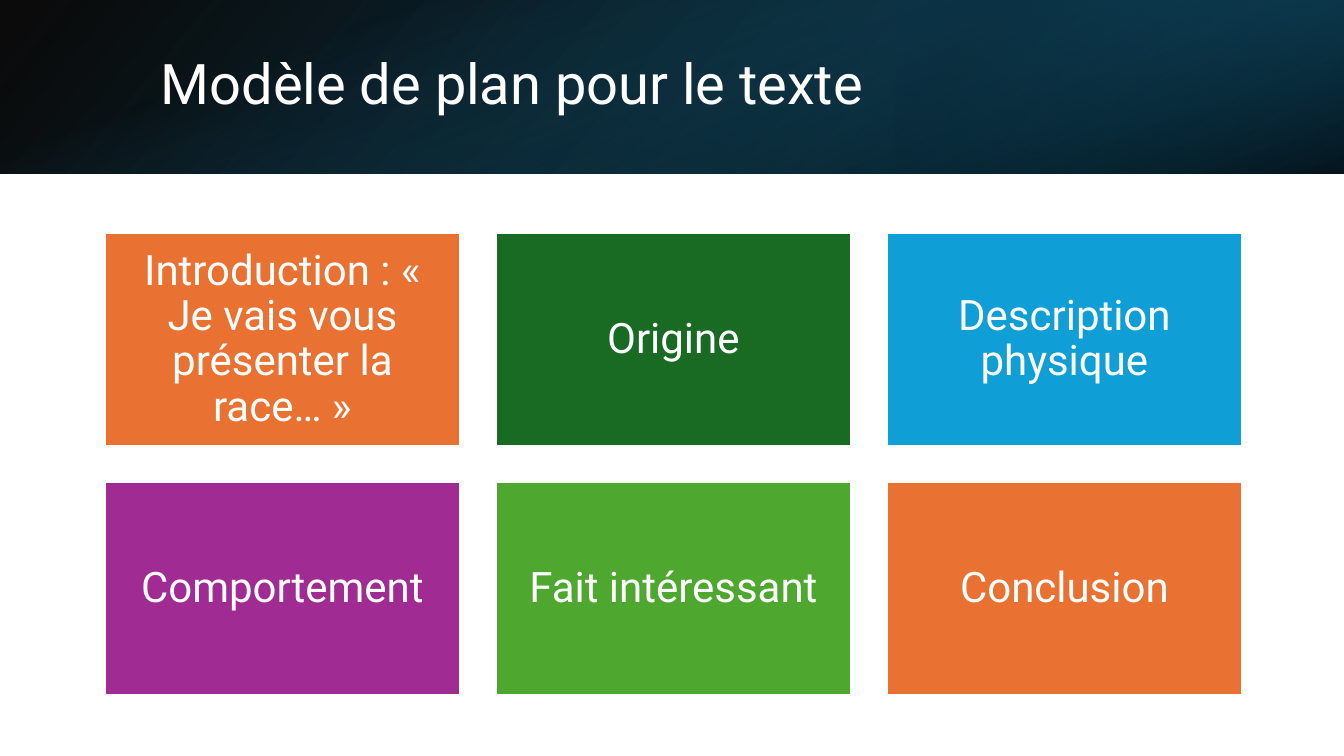
from lxml import etree
from pptx import Presentation
from pptx.dml.color import RGBColor
from pptx.enum.shapes import MSO_SHAPE
from pptx.enum.text import MSO_ANCHOR, PP_ALIGN
from pptx.oxml import parse_xml
from pptx.oxml.ns import nsdecls, qn
from pptx.util import Pt

RECTANGLE = MSO_SHAPE.RECTANGLE
MIDDLE = MSO_ANCHOR.MIDDLE
LEFT, CENTER = PP_ALIGN.LEFT, PP_ALIGN.CENTER

EMU_PER_PX = 914400 / 100.8
PAGE_WIDTH, PAGE_HEIGHT = 1344, 756
BAND_HEIGHT = 174
FONT = "Roboto"
WHITE = "FFFFFF"

# Plan cards, row by row
COLUMNS = 3
CARD_LEFT, CARD_TOP = 105, 233
CARD_WIDTH, CARD_HEIGHT = 355, 213
PITCH_X, PITCH_Y = 391, 249
CARD_INSET = 12
CARDS = [
    ("Introduction : « Je vais vous présenter la race… »", "E97132"),
    ("Origine", "196B24"),
    ("Description physique", "0F9ED5"),
    ("Comportement", "A02B93"),
    ("Fait intéressant", "4EA72E"),
    ("Conclusion", "E97132"),
]


def px(length):
    return round(length * EMU_PER_PX)


def color(hex_value):
    return RGBColor.from_string(hex_value)


def add_rectangle(page, left, top, width, height):
    box = page.shapes.add_shape(RECTANGLE, px(left), px(top), px(width), px(height))
    box.shadow.inherit = False
    return box


def add_gradient_band(page, place, stops, angle, rotation=0, flipped=False):
    """Stops are (position %, colour, opacity %); the angle runs clockwise."""
    band = add_rectangle(page, *place)
    band.line.fill.background()
    band.rotation = rotation
    properties = band.fill._xPr
    if flipped:
        properties.find(qn("a:xfrm")).set("flipH", "1")
    gradient = parse_xml(f'<a:gradFill {nsdecls("a")} rotWithShape="1"><a:gsLst/></a:gradFill>')
    for position, hex_value, opacity in stops:
        stop = etree.SubElement(gradient[0], qn("a:gs"), pos=str(position * 1000))
        shade = etree.SubElement(stop, qn("a:srgbClr"), val=hex_value)
        etree.SubElement(shade, qn("a:alpha"), val=str(opacity * 1000))
    etree.SubElement(gradient, qn("a:lin"), ang=str(angle * 60000), scaled="0")
    properties.find(qn("a:prstGeom")).addnext(gradient)


def write_text(box, text, size, alignment):
    frame = box.text_frame
    frame.word_wrap = True
    frame.vertical_anchor = MIDDLE
    frame.text = text
    para = frame.paragraphs[0]
    para.alignment = alignment
    para.line_spacing = 0.9
    for span in para.runs:
        span.font.name = FONT
        span.font.size = Pt(size)
        span.font.color.rgb = color(WHITE)


def add_title(page, text):
    box = page.shapes.add_textbox(px(151), px(38), px(1107), px(97))
    write_text(box, text, 40, LEFT)


def add_card(page, index, text, fill):
    row, column = divmod(index, COLUMNS)
    box = add_rectangle(page, CARD_LEFT + column * PITCH_X, CARD_TOP + row * PITCH_Y,
                        CARD_WIDTH, CARD_HEIGHT)
    box.fill.solid()
    box.fill.fore_color.rgb = color(fill)
    box.line.color.rgb = color(WHITE)
    box.line.width = Pt(1.5)
    frame = box.text_frame
    frame.margin_left = frame.margin_right = px(CARD_INSET)
    frame.margin_top = frame.margin_bottom = px(CARD_INSET)
    write_text(box, text, 30, CENTER)


def main():
    deck = Presentation()
    deck.slide_width, deck.slide_height = px(PAGE_WIDTH), px(PAGE_HEIGHT)
    page = deck.slides.add_slide(deck.slide_layouts[6])

    # Header: three layered gradients, the last one turned on its side
    add_gradient_band(page, (0, 0, PAGE_WIDTH, BAND_HEIGHT),
                      [(0, "000000", 96), (100, "104862", 100)], 140, flipped=True)
    add_gradient_band(page, (896, 0, 448, BAND_HEIGHT),
                      [(19, "0B3041", 68), (100, "156082", 79)], 320,
                      rotation=180, flipped=True)
    offset = (PAGE_WIDTH - BAND_HEIGHT) // 2
    add_gradient_band(page, (offset, -offset, BAND_HEIGHT, PAGE_WIDTH),
                      [(23, "156082", 0), (99, "000000", 74)], 340, rotation=90)
    add_title(page, "Modèle de plan pour le texte")

    # Grid of plan steps
    for index, (text, fill) in enumerate(CARDS):
        add_card(page, index, text, fill)

    deck.save("out.pptx")


if __name__ == "__main__":
    main()
